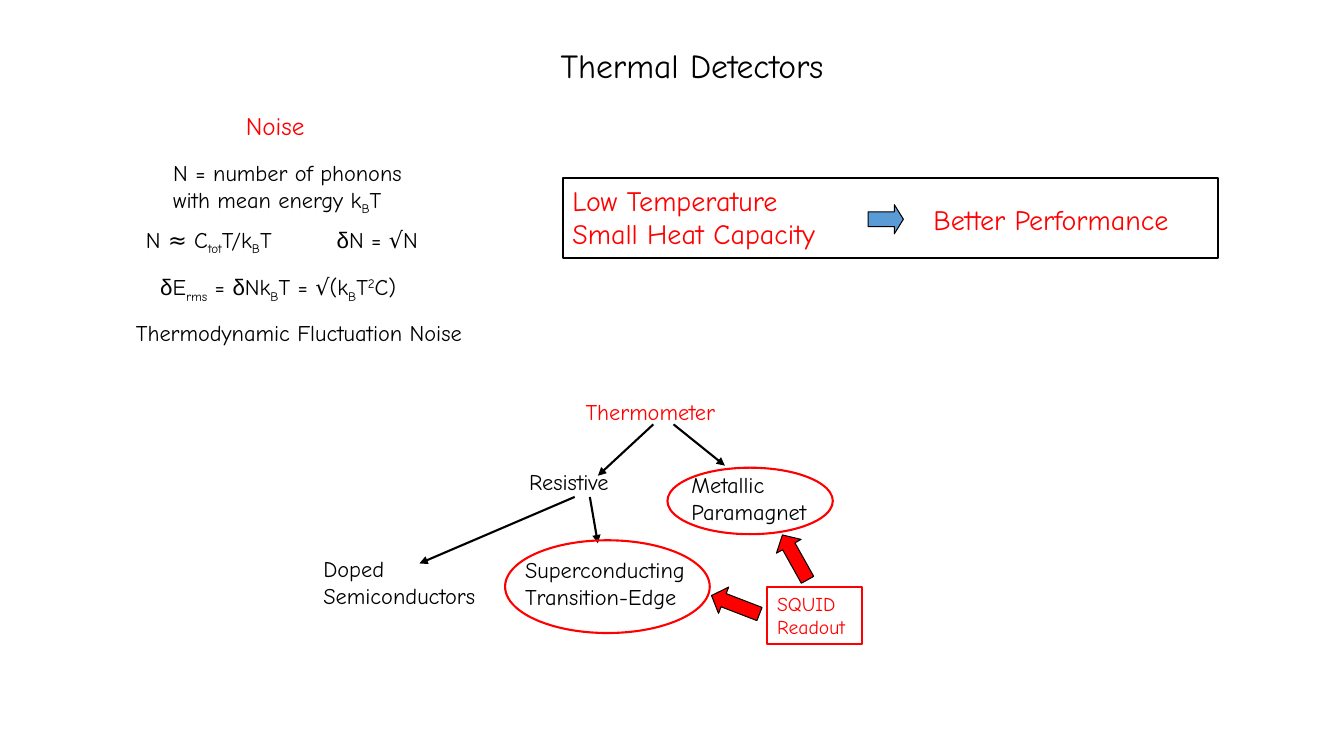
import pptx
import pptx.util
import pptx.dml.color
import pptx.enum.shapes
import pptx.enum.text
import pptx.oxml.ns
from lxml import etree

PX = 9144
COLOURS = {"black": "000000", "red": "FF0000", "white": "FFFFFF", "blue": "5B9BD5"}
BASELINES = {"sub": "-25000", "sup": "30000"}
SHAPES = pptx.enum.shapes.MSO_SHAPE


def emu(*lengths):
    return [pptx.util.Emu(length * PX) for length in lengths]


def colour(name):
    return pptx.dml.color.RGBColor.from_string(COLOURS[name])


def write(holder, lines, size, ink):
    frame = holder.text_frame
    frame.word_wrap = True
    frame.auto_size = pptx.enum.text.MSO_AUTO_SIZE.NONE
    frame.vertical_anchor = pptx.enum.text.MSO_ANCHOR.TOP
    for index, line in enumerate(lines):
        para = frame.add_paragraph() if index else frame.paragraphs[0]
        para.alignment = pptx.enum.text.PP_ALIGN.LEFT
        pieces = [(line, "")] if isinstance(line, str) else line
        for words, role in pieces:
            span = para.add_run()
            span.text = words
            span.font.size = pptx.util.Pt(size)
            span.font.name = "Arial" if role == "greek" else "Comic Neue"
            span.font.color.rgb = colour(ink)
            if role in BASELINES:
                span.font._element.set("baseline", BASELINES[role])


def add_label(shapes, box, lines, size=16, ink="black"):
    write(shapes.add_textbox(*emu(*box)), lines, size, ink)


def add_figure(shapes, kind, box, fill, line, weight=1.5, turn=0, head=None):
    figure = shapes.add_shape(kind, *emu(*box))
    figure.shadow.inherit = False
    if fill:
        figure.fill.solid()
        figure.fill.fore_color.rgb = colour(fill)
    else:
        figure.fill.background()
    figure.line.color.rgb = colour(line)
    figure.line.width = pptx.util.Pt(weight)
    figure.rotation = turn
    if head:
        figure.adjustments[1] = head
    return figure


def add_arrow(shapes, start, end):
    arrow = shapes.add_connector(
        pptx.enum.shapes.MSO_CONNECTOR.STRAIGHT, *emu(*start, *end))
    arrow.line.color.rgb = colour("black")
    arrow.line.width = pptx.util.Pt(1.5)
    outline = arrow.line._get_or_add_ln()
    etree.SubElement(outline, pptx.oxml.ns.qn("a:tailEnd"), type="triangle")
    etree.SubElement(arrow._element.spPr, pptx.oxml.ns.qn("a:effectLst"))


def add_title(page, box):
    title = page.shapes.title
    title.left, title.top, title.width, title.height = emu(*box)
    write(title, ["Thermal Detectors"], 24, "black")


def add_noise(page, left, top):
    shapes = page.shapes.add_group_shape().shapes
    add_label(shapes, (left + 109, top, 87, 40), ["Noise"], 18, "red")
    formulas = [
        (37, 48, 266, 64, ["N = number of phonons",
                           [("with mean energy k", ""), ("B", "sub"), ("T", "")]]),
        (10, 114, 164, 37, [[("N ≈ C", ""), ("tot", "sub"), ("T/k", ""),
                             ("B", "sub"), ("T", "")]]),
        (199, 114, 105, 37, [[("δ", "greek"), ("N = √N", "")]]),
        (24, 161, 276, 37, [[("δ", "greek"), ("E", ""), ("rms", "sub"), (" = ", ""),
                             ("δ", "greek"), ("Nk", ""), ("B", "sub"),
                             ("T = √(k", ""), ("B", "sub"), ("T", ""),
                             ("2", "sup"), ("C)", "")]]),
        (0, 207, 374, 37, ["Thermodynamic Fluctuation Noise"]),
    ]
    for x, y, width, height, lines in formulas:
        add_label(shapes, (left + x, top + y, width, height), lines)


def add_thermometer(page, left, top):
    shapes = page.shapes.add_group_shape().shapes
    labels = [
        (260, 0, 164, 37, ["Thermometer"], "red"),
        (204, 70, 115, 37, ["Resistive"], "black"),
        (365, 73, 141, 64, ["Metallic", "Paramagnet"], "black"),
        (0, 156, 187, 64, ["Doped", "Semiconductors"], "black"),
        (200, 157, 201, 64, ["Superconducting", "Transition-Edge"], "black"),
    ]
    for x, y, width, height, lines, ink in labels:
        add_label(shapes, (left + x, top + y, width, height), lines, 16, ink)

    branches = [(337, 31, 282, 82), (357, 31, 408, 72),
                (259, 103, 105, 169), (274, 103, 282, 149)]
    for x1, y1, x2, y2 in branches:
        add_arrow(shapes, (left + x1, top + y1), (left + x2, top + y2))

    for x, y, width, height in [(190, 146, 203, 92), (351, 74, 164, 66)]:
        add_figure(shapes, SHAPES.OVAL, (left + x, top + y, width, height), None, "red")

    readout = add_figure(shapes, SHAPES.RECTANGLE, (left + 450, top + 192, 94, 57),
                         "white", "red")
    write(readout, ["SQUID", "Readout"], 14, "red")
    for x, y, turn in [(393, 196, 21.1), (452, 149, 60.8)]:
        add_figure(shapes, SHAPES.LEFT_ARROW, (left + x, top + y, 51, 28),
                   "red", "black", 0.75, turn, 0.46)


def add_performance(page, left, top, width, height):
    shapes = page.shapes
    add_label(shapes, (left, top, 283, 77),
              ["Low Temperature", "Small Heat Capacity"], 20, "red")
    add_label(shapes, (left + 358, top + 19, 284, 44), ["Better Performance"], 20, "red")
    add_figure(shapes, SHAPES.RIGHT_ARROW, (left + 303, top + 26, 35, 29),
               "blue", "black", 0.75, head=0.31)
    add_figure(shapes, SHAPES.RECTANGLE, (left, top, width, height), None, "black")


def main():
    deck = pptx.Presentation()
    deck.slide_width, deck.slide_height = emu(1333, 750)
    page = deck.slides.add_slide(deck.slide_layouts.get_by_name("Title Only"))
    add_title(page, (546, 40, 320, 50))
    add_noise(page, 125, 105)
    add_thermometer(page, 311, 390)
    add_performance(page, 558, 177, 650, 79)
    deck.save("out.pptx")


if __name__ == "__main__":
    main()
